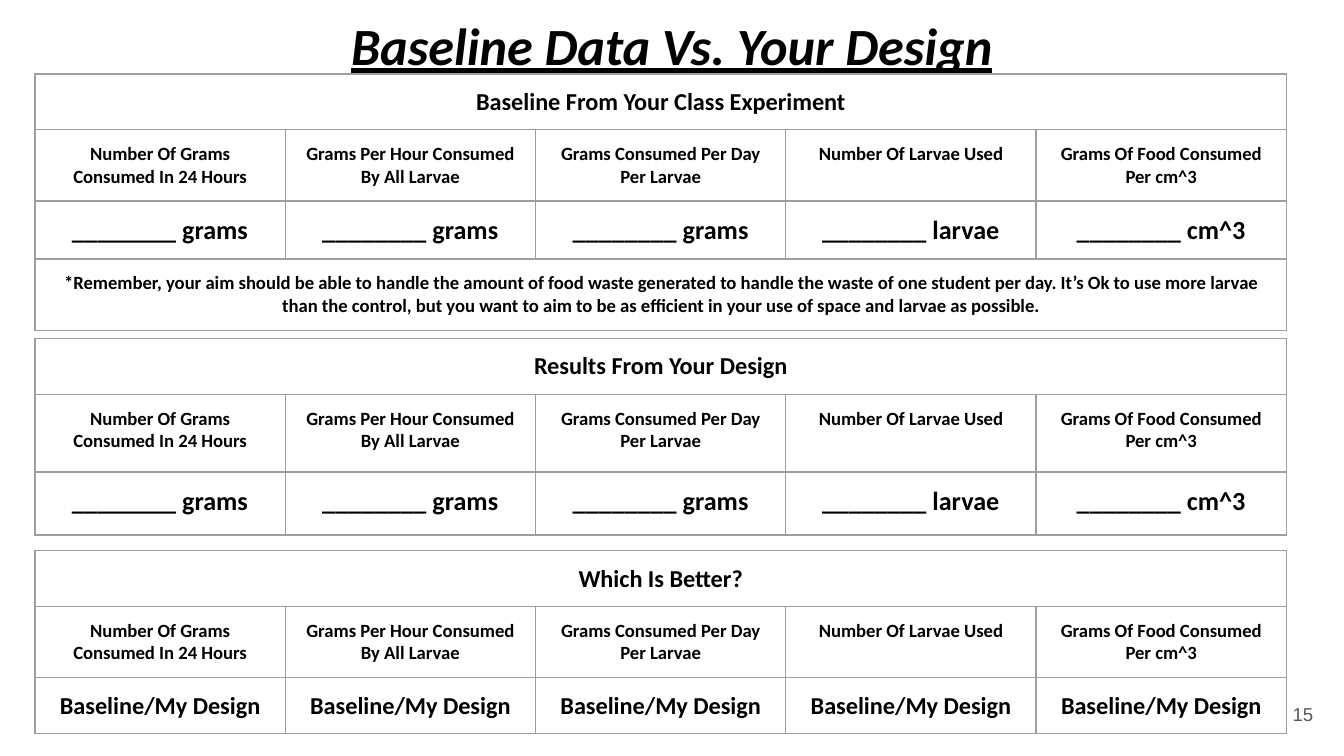
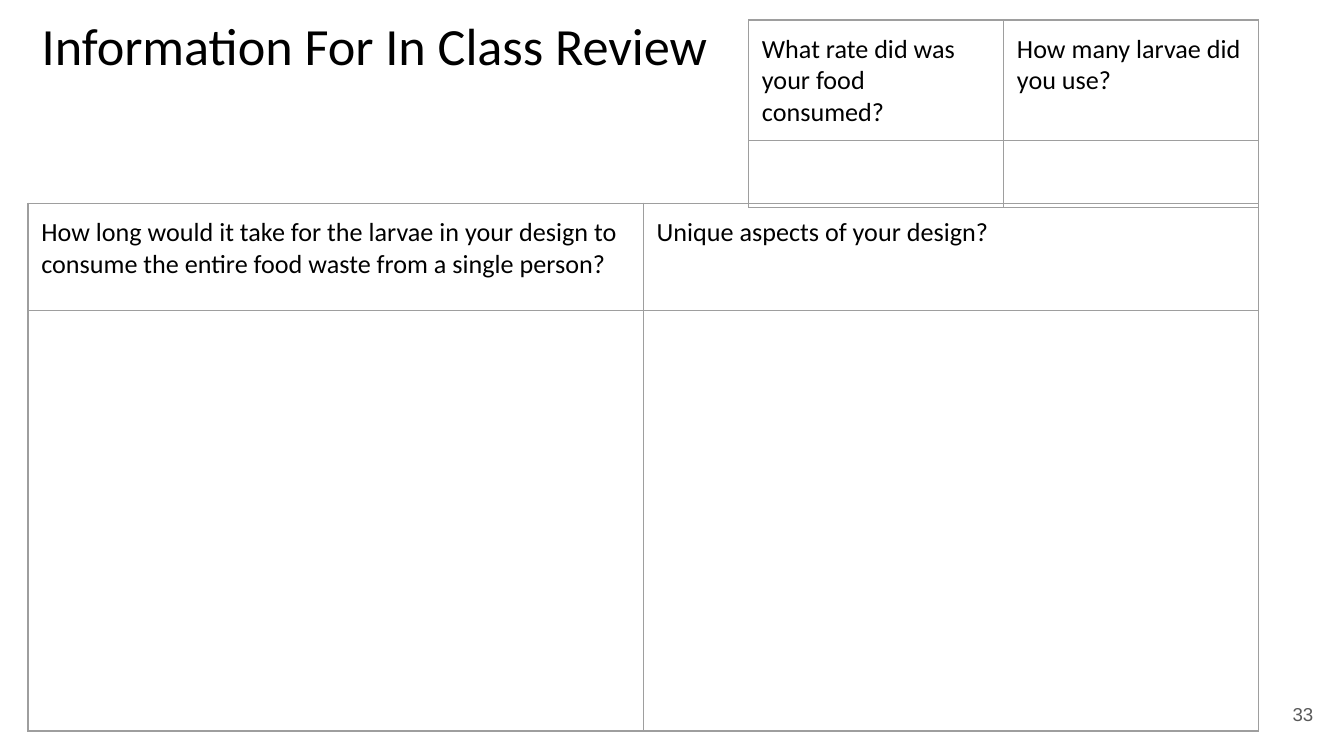
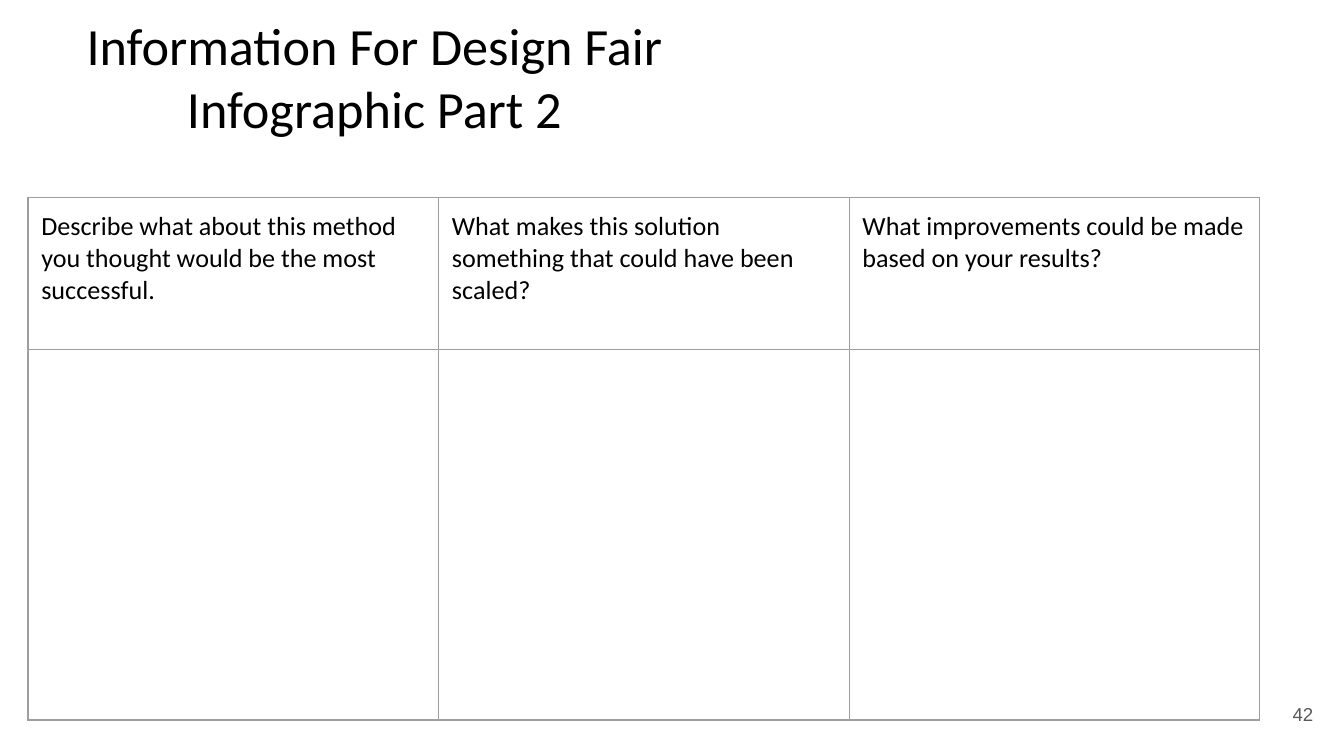
"""Build three larvae design worksheets made of titled tables."""
from dataclasses import dataclass

from lxml import etree
from pptx import Presentation
from pptx import util as u
from pptx.dml.color import RGBColor
from pptx.enum import text as t
from pptx.oxml import ns


@dataclass(frozen=True)
class Theme:
    ink: str = "000000"
    border: str = "9E9E9E"
    muted: str = "595959"
    background: str = "FFFFFF"
    font: str = "Calibri"
    number_font: str = "Arial"
    title: int = 28
    blank: int = 18
    body: int = 14
    heading: int = 13
    small: int = 10
    border_width: float = 0.75
    inset: float = 0.25


THEME = Theme()
CENTER = t.PP_ALIGN.CENTER
HEADING = dict(size=THEME.heading, bold=True, align=CENTER)
LABEL = dict(size=THEME.small, bold=True, align=CENTER)
ANSWER = dict(size=THEME.body, bold=True, align=CENTER)
QUESTION = dict(size=THEME.body)
BLANK = dict(size=THEME.blank, font=THEME.number_font)

MEASURES = [
    "Number Of Grams Consumed In 24 Hours",
    "Grams Per Hour Consumed By All Larvae",
    "Grams Consumed Per Day Per Larvae",
    "Number Of Larvae Used",
    "Grams Of Food Consumed Per cm^3",
]
ANSWERS = [f"________ {unit}" for unit in ("grams", "grams", "grams", "larvae", "cm^3")]
REMINDER = (
    "*Remember, your aim should be able to handle the amount of food waste generated "
    "to handle the waste of one student per day. It’s Ok to use more larvae than the "
    "control, but you want to aim to be as efficient in your use of space and larvae "
    "as possible."
)


def write(frame, text, size, font=THEME.font, color=THEME.ink, bold=False,
          italic=False, underline=False, align=t.PP_ALIGN.LEFT):
    paragraph = frame.paragraphs[0]
    paragraph.alignment = align
    run = paragraph.add_run()
    run.text = text
    style = run.font
    style.name, style.size = font, u.Pt(size)
    style.bold, style.italic, style.underline = bold, italic, underline
    style.color.rgb = RGBColor.from_string(color)


def set_insets(target):
    for side in ("left", "right", "top", "bottom"):
        setattr(target, f"margin_{side}", u.Cm(THEME.inset))


def set_borders(cell):
    properties = cell._tc.get_or_add_tcPr()
    for side in ("lnL", "lnR", "lnT", "lnB"):
        line = etree.SubElement(properties, ns.qn(f"a:{side}"),
                                w=str(u.Pt(THEME.border_width)))
        fill = etree.SubElement(line, ns.qn("a:solidFill"))
        etree.SubElement(fill, ns.qn("a:srgbClr"), val=THEME.border)


class Worksheet:
    def __init__(self):
        self.presentation = Presentation()
        self.presentation.slide_width = u.Cm(25.4)
        self.presentation.slide_height = u.Cm(14.29)
        self.slide = None

    def add_slide(self, number):
        self.slide = self.presentation.slides.add_slide(self.presentation.slide_layouts[6])
        fill = self.slide.background.fill
        fill.solid()
        fill.fore_color.rgb = RGBColor.from_string(THEME.background)
        self.text_box(str(number), 23.55, 12.95, 1.52, 1.09, anchor=t.MSO_ANCHOR.MIDDLE,
                      size=THEME.small, font=THEME.number_font, color=THEME.muted,
                      align=t.PP_ALIGN.RIGHT)

    def text_box(self, text, left, top, width, height, anchor=t.MSO_ANCHOR.TOP, **style):
        shape = self.slide.shapes.add_textbox(u.Cm(left), u.Cm(top), u.Cm(width), u.Cm(height))
        frame = shape.text_frame
        frame.word_wrap = True
        frame.vertical_anchor = anchor
        set_insets(frame)
        write(frame, text, **style)

    def title(self, text, left=0, width=14.15, **style):
        self.text_box(text, left, 0, width, 1.6, size=THEME.title, align=CENTER, **style)

    def table(self, left, top, columns, column_width, rows):
        height = sum(row[0] for row in rows)
        shape = self.slide.shapes.add_table(len(rows), columns, u.Cm(left), u.Cm(top),
                                            u.Cm(columns * column_width), u.Cm(height))
        table = shape.table
        table.first_row = table.horz_banding = False
        for column in table.columns:
            column.width = u.Cm(column_width)
        for index, (row_height, texts, style) in enumerate(rows):
            table.rows[index].height = u.Cm(row_height)
            for cell in table.rows[index].cells:
                set_insets(cell)
                set_borders(cell)
                cell.fill.background()
            if len(texts) == 1:
                table.cell(index, 0).merge(table.cell(index, columns - 1))
            for column, text in enumerate(texts):
                write(table.cell(index, column).text_frame, text, **style)

    def measure_table(self, top, heading, heights, answers, answer_style, note=None):
        contents = [([heading], HEADING), (MEASURES, LABEL), (answers, answer_style)]
        if note:
            contents.append(([note], LABEL))
        rows = [(height, *content) for height, content in zip(heights, contents)]
        self.table(0.66, top, len(MEASURES), 4.73, rows)

    def question_table(self, left, top, column_width, heights, questions):
        blanks = [""] * len(questions)
        self.table(left, top, len(questions), column_width,
                   [(heights[0], questions, QUESTION), (heights[1], blanks, BLANK)])


def main():
    sheet = Worksheet()

    sheet.add_slide(15)
    sheet.title("Baseline Data Vs. Your Design", left=0.86, width=23.67,
                bold=True, italic=True, underline=True)
    sheet.measure_table(1.4, "Baseline From Your Class Experiment",
                        (0.66, 1.07, 1.07, 1.07), ANSWERS, ANSWER, REMINDER)
    sheet.measure_table(6.4, "Results From Your Design",
                        (0.91, 1.47, 1.19), ANSWERS, ANSWER)
    sheet.measure_table(10.41, "Which Is Better?", (0.89, 1.09, 0.89),
                        ["Baseline/My Design"] * len(MEASURES), HEADING)

    sheet.add_slide(33)
    sheet.title("Information For In Class Review")
    sheet.question_table(14.15, 0.38, 4.82, (2.01, 0.99), [
        "What rate did was your food consumed?",
        "How many larvae did you use?",
    ])
    sheet.question_table(0.53, 3.84, 11.63, (2.03, 7.95), [
        "How long would it take for the larvae in your design to consume the entire "
        "food waste from a single person?",
        "Unique aspects of your design?",
    ])

    sheet.add_slide(42)
    sheet.title("Information For Design Fair Infographic Part 2")
    sheet.question_table(0.53, 3.73, 7.76, (2.87, 7.01), [
        "Describe what about this method you thought would be the most successful.",
        "What makes this solution something that could have been scaled?",
        "What improvements could be made based on your results?",
    ])

    sheet.presentation.save("out.pptx")


if __name__ == "__main__":
    main()
